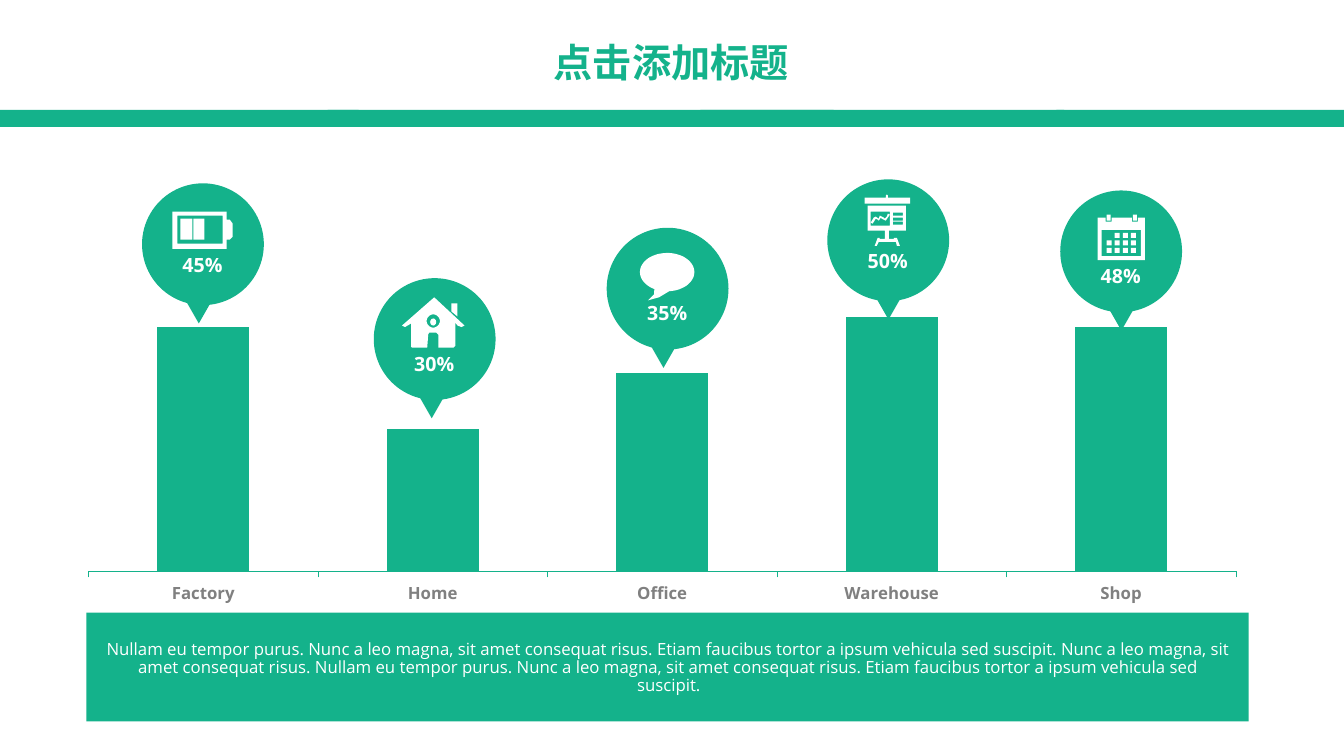
from dataclasses import dataclass
from math import cos, radians, sin

from lxml.etree import SubElement
from pptx import Presentation
from pptx.chart.data import CategoryChartData
from pptx.dml.color import RGBColor
from pptx.enum.chart import XL_CHART_TYPE, XL_TICK_LABEL_POSITION, XL_TICK_MARK
from pptx.enum.shapes import MSO_SHAPE
from pptx.enum.text import MSO_ANCHOR, PP_ALIGN
from pptx.oxml.ns import qn
from pptx.slide import Slide
from pptx.text.text import TextFrame
from pptx.util import Cm, Pt

GREEN = RGBColor(0x14, 0xB2, 0x8B)
GREY = RGBColor(0x80, 0x80, 0x80)
WHITE = RGBColor(0xFF, 0xFF, 0xFF)
LATIN_FONT = "Open Sans"
TITLE_FONT = "Noto Sans CJK SC"
ICON_UNIT = Cm(0.0254)
FINENESS = 10

Contour = list[tuple[float, float]]


@dataclass(frozen=True)
class Icon:
    outlines: tuple[tuple[Contour, ...], ...]
    rectangles: tuple[tuple[float, float, float, float], ...] = ()
    ellipses: tuple[tuple[float, float, float, float], ...] = ()


@dataclass(frozen=True)
class Bubble:
    label: str
    value: int
    left: float
    top: float
    tail_offset: float
    text_offset: float
    percent: str
    icon: Icon


def window(left: float, top: float, right: float, bottom: float) -> Contour:
    return [(left, top), (left, bottom), (right, bottom), (right, top)]


def arc(x: float, y: float, rx: float, ry: float, start: int, end: int) -> Contour:
    return [(x + rx * cos(radians(a)), y + ry * sin(radians(a))) for a in range(start, end, 6)]


BATTERY = Icon(
    (([(84, 36), (84, 28), (30, 28), (30, 65), (84, 65), (84, 56), (87, 56), (90, 53),
       (90, 40), (87, 36)], window(35, 32, 80, 60)),),
    ((38, 35, 12, 21), (51, 35, 11, 21)),
)
HOUSE = Icon(
    (([(60, 19), (28, 47), (31, 48.5), (37, 45), (37, 68), (38, 69), (53, 69), (54, 56),
       (55, 54), (62, 54), (64, 56), (64, 69), (79, 69), (81, 67), (81, 44), (83, 47),
       (87, 48.5), (90, 47)], arc(59, 42.5, 6.5, 6.5, 0, 360)),
     ([(83, 38), (83, 25), (77, 25), (77, 33)],)),
    ellipses=((56, 40, 6, 7),),
)
SPEECH = Icon((([*arc(60, 44, 27, 19, 118, 446), (62, 63), (52, 69), (41, 72), (47, 66)],),))
BOARD = Icon(
    (([(60, 18), (60, 16), (59, 15), (58, 16), (58, 18), (37, 18), (37, 24), (82, 24),
       (82, 18)],),
     ([(78, 51), (78, 26), (40, 26), (40, 51), (57, 51), (57, 59), (52, 59), (52, 58),
       (50, 58), (47, 66), (49, 66), (51, 62), (68, 62), (69, 66), (72, 66), (69, 58),
       (66, 58), (66, 59), (61, 59), (61, 51)],
      window(43, 32, 62, 46), *(window(65, y, 75, y + 3) for y in (33, 38, 42))),
     ([(59, 37), (57, 39), (56, 38), (52, 36), (51, 39), (48, 37), (46, 38), (43, 43),
       (45, 44), (48, 39), (50, 40), (51, 41), (53, 38), (54, 39), (58, 41), (60, 38),
       (62, 35), (60, 34)],)),
)
CALENDAR = Icon(
    (([(84, 27), (77, 27), (77, 31), (71, 31), (71, 27), (51, 27), (51, 31), (45, 31),
       (45, 27), (37, 27), (37, 69), (84, 69)], window(41, 39, 80, 65)),),
    (*((46 + 8 * column, 42 + 7.5 * row, 5, 5)
       for row in range(3) for column in range(4) if row or column),
     (46, 24, 4, 6), (72, 24, 4, 6)),
)

BUBBLES = (
    Bubble("Factory", 96, 3.58, 4.62, 0.91, 1.73, "45%", BATTERY),
    Bubble("Home", 56, 9.42, 7.01, 0.94, 1.85, "30%", HOUSE),
    Bubble("Office", 78, 15.29, 5.74, 0.91, 1.83, "35%", SPEECH),
    Bubble("Warehouse", 100, 20.85, 4.52, 1.02, 1.73, "50%", BOARD),
    Bubble("Shop", 96, 26.72, 4.8, 1.02, 1.83, "48%", CALENDAR),
)
STRIPS = ((0, 9.04), (8.26, 12.75), (17.65, 9.17), (26.62, 7.25))
FOOTER = (
    "Nullam eu tempor purus. Nunc a leo magna, sit amet consequat risus. "
    "Etiam faucibus tortor a ipsum vehicula sed suscipit. "
    "Nunc a leo magna, sit amet consequat risus. Nullam eu tempor purus. "
    "Nunc a leo magna, sit amet consequat risus. "
    "Etiam faucibus tortor a ipsum vehicula sed suscipit."
)


def paint(shape, color: RGBColor) -> None:
    shape.shadow.inherit = False
    shape.fill.solid()
    shape.fill.fore_color.rgb = color
    shape.line.fill.background()


def add_solid(page: Slide, kind: MSO_SHAPE, left: int, top: int, width: int, height: int,
              color: RGBColor = GREEN):
    shape = page.shapes.add_shape(kind, left, top, width, height)
    paint(shape, color)
    return shape


def write(frame: TextFrame, text: str, size: int, color: RGBColor, bold: bool,
          font: str = LATIN_FONT, inset_x: float = 0.13, inset_y: float = 0.08,
          anchor: MSO_ANCHOR = MSO_ANCHOR.TOP) -> None:
    frame.word_wrap = True
    frame.vertical_anchor = anchor
    frame.margin_left = frame.margin_right = Cm(inset_x)
    frame.margin_top = frame.margin_bottom = Cm(inset_y)
    frame.text = text
    para = frame.paragraphs[0]
    para.alignment = PP_ALIGN.CENTER
    para.line_spacing = 0.9
    para.space_before = Pt(0)
    para.font.size, para.font.bold, para.font.name = Pt(size), bold, font
    para.font.color.rgb = color
    SubElement(para.font._element, qn("a:ea"), typeface=font)


def add_icon(page: Slide, icon: Icon, left: int, top: int) -> None:
    for first, *others in icon.outlines:
        start, *rest = [(x * FINENESS, y * FINENESS) for x, y in first]
        builder = page.shapes.build_freeform(*start, scale=ICON_UNIT / FINENESS)
        builder.add_line_segments(rest)
        for contour in others:
            start, *rest = [(x * FINENESS, y * FINENESS) for x, y in contour]
            builder.move_to(*start)
            builder.add_line_segments(rest)
        paint(builder.convert_to_shape(left, top), WHITE)
    for kind, frames in ((MSO_SHAPE.RECTANGLE, icon.rectangles), (MSO_SHAPE.OVAL, icon.ellipses)):
        for x, y, width, height in frames:
            add_solid(page, kind, left + int(x * ICON_UNIT), top + int(y * ICON_UNIT),
                      int(width * ICON_UNIT), int(height * ICON_UNIT), WHITE)


def add_bubble(page: Slide, bubble: Bubble) -> None:
    left, top = Cm(bubble.left), Cm(bubble.top)
    add_solid(page, MSO_SHAPE.OVAL, left, top, Cm(3.07), Cm(3.07))
    tail = add_solid(page, MSO_SHAPE.ISOSCELES_TRIANGLE, left + Cm(bubble.tail_offset),
                     top + Cm(2.62), Cm(1.04), Cm(0.91))
    tail.rotation = 180
    box = page.shapes.add_textbox(left + Cm(0.28), top + Cm(bubble.text_offset), Cm(2.49), Cm(0.97))
    write(box.text_frame, bubble.percent, 14, WHITE, True)
    add_icon(page, bubble.icon, left, top)


def add_columns(page: Slide) -> None:
    data = CategoryChartData()
    data.categories = [bubble.label for bubble in BUBBLES]
    data.add_series("Series 1", [bubble.value for bubble in BUBBLES])
    chart = page.shapes.add_chart(XL_CHART_TYPE.COLUMN_CLUSTERED, Cm(1.63), Cm(7.09),
                                  Cm(30.12), Cm(8.31), data).chart
    chart.has_legend = chart.has_title = False
    chart.font.name, chart.font.size = TITLE_FONT, Pt(18)
    plot = chart.plots[0]
    plot.gap_width = 150
    plot.vary_by_categories = False
    fill = plot.series[0].format.fill
    fill.solid()
    fill.fore_color.rgb = GREEN
    values = chart.value_axis
    values.minimum_scale, values.maximum_scale = 0, 110
    values.has_major_gridlines = values.visible = False
    axis = chart.category_axis
    axis.major_tick_mark = XL_TICK_MARK.OUTSIDE
    axis.tick_label_position = XL_TICK_LABEL_POSITION.LOW
    axis.format.line.color.rgb = GREEN
    axis.format.line.width = Pt(0.5)
    font = axis.tick_labels.font
    font.name, font.size, font.bold = LATIN_FONT, Pt(12), True
    font.color.rgb = GREY
    area = chart._chartSpace.chart.plotArea
    for old in area.findall(qn("c:layout")):
        area.remove(old)
    layout = SubElement(area, qn("c:layout"))
    area.insert(0, layout)
    manual = SubElement(layout, qn("c:manualLayout"))
    for tag, value in (("layoutTarget", "inner"), ("xMode", "edge"), ("yMode", "edge"),
                       ("x", "0.02"), ("y", "0.03"), ("w", "0.96"), ("h", "0.85")):
        SubElement(manual, qn(f"c:{tag}"), val=value)


def main() -> None:
    deck = Presentation()
    deck.slide_width, deck.slide_height = Cm(33.87), Cm(19.05)
    page = deck.slides.add_slide(deck.slide_layouts[5])
    for left, width in STRIPS:
        add_solid(page, MSO_SHAPE.RECTANGLE, Cm(left), Cm(2.77), Cm(width), Cm(0.43))
    title = page.shapes.title
    title.left, title.top, title.width, title.height = Cm(7.06), Cm(0.97), Cm(19.71), Cm(2.21)
    write(title.text_frame, "点击添加标题", 28, GREEN, True, TITLE_FONT, 0.25, 0.13)
    add_columns(page)
    for bubble in BUBBLES:
        add_bubble(page, bubble)
    add_solid(page, MSO_SHAPE.RECTANGLE, Cm(2.18), Cm(15.44), Cm(29.29), Cm(2.74))
    footer = page.shapes.add_textbox(Cm(2.54), Cm(15.72), Cm(28.63), Cm(2.21))
    write(footer.text_frame, FOOTER, 12, WHITE, False, anchor=MSO_ANCHOR.MIDDLE)
    deck.save("out.pptx")


if __name__ == "__main__":
    main()
